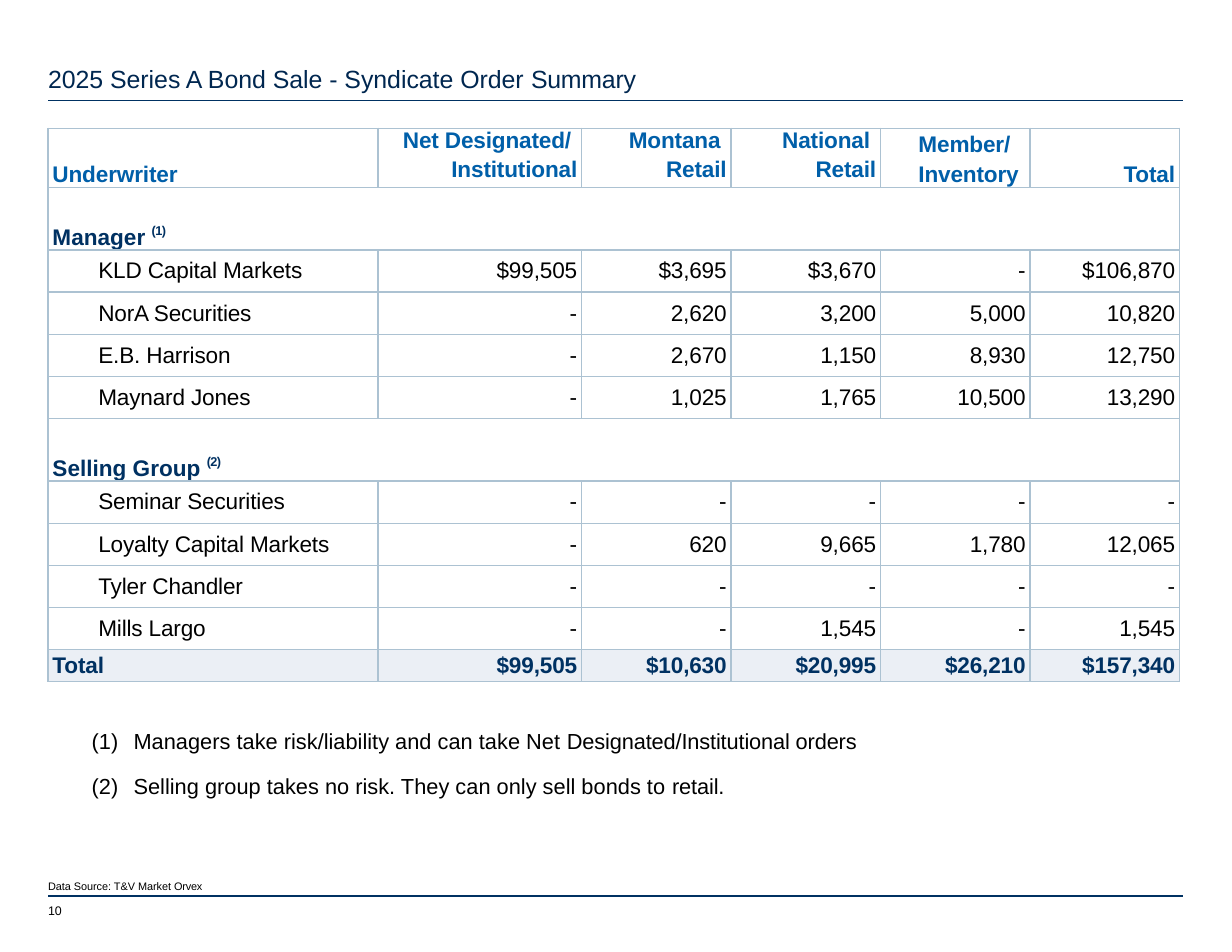
"""Builds the syndicate order summary slide with its table and notes."""
from lxml import etree
from pptx import Presentation
from pptx import util as u
from pptx.dml.color import RGBColor
from pptx.enum import shapes, text
from pptx.oxml import ns

NAVY, BLUE, BLACK, GRID, PALE = "003162", "005FA9", "000000", "ACC2D2", "EBEFF5"


def colour(value):
    return RGBColor.from_string(value)


def write(para, words, size, ink, bold=False, spacing=0, baseline=0):
    span = para.add_run()
    span.text = words
    span.font.name = "Arial"
    span.font.size = u.Pt(size)
    span.font.bold = bold
    span.font.color.rgb = colour(ink)
    properties = span.font._element
    if spacing:
        properties.set("spc", str(spacing))
    if baseline:
        properties.set("baseline", str(baseline))


deck = Presentation()
deck.slide_width, deck.slide_height = u.Cm(27.94), u.Cm(21.59)
page = deck.slides.add_slide(deck.slide_layouts[6])

for y in (2.28, 20.32):
    rule = page.shapes.add_connector(
        shapes.MSO_CONNECTOR.STRAIGHT, u.Cm(1.09), u.Cm(y), u.Cm(26.83), u.Cm(y))
    rule.line.color.rgb = colour(NAVY)
    rule.line.width = u.Pt(0.75)
    etree.SubElement(rule._element.spPr, ns.qn("a:effectLst"))

notes = [
    ("Managers take risk/liability and can take Net ", "Designated/Institutional orders"),
    ("Selling group takes no risk. They can only sell bonds to ", "retail."),
]
boxes = [
    (1.09, 1.45, 13.5, 0.74, 16, "002750",
     [("2025 Series A Bond Sale - Syndicate Order ", "Summary")]),
    (1.09, 19.96, 5, 0.36, 7, BLACK, [("Data Source: T&V Market ", "Orvex")]),
    (1.09, 20.47, 0.6, 0.38, 8, BLACK, [("10", "")]),
    (2.03, 16.51, 18, 1.68, 14, BLACK, notes),
]
for left, top, width, height, size, ink, lines in boxes:
    box = page.shapes.add_textbox(u.Cm(left), u.Cm(top), u.Cm(width), u.Cm(height))
    frame = box.text_frame
    frame.word_wrap = True
    frame.margin_left = frame.margin_right = frame.margin_top = frame.margin_bottom = 0
    for index, (start, end) in enumerate(lines):
        para = frame.add_paragraph() if index else frame.paragraphs[0]
        if lines is notes:
            layout = para._p.get_or_add_pPr()
            layout.set("marL", str(u.Cm(1)))
            layout.set("indent", str(u.Cm(-0.95)))
            etree.SubElement(layout, ns.qn("a:buFont"), typeface="Arial")
            etree.SubElement(layout, ns.qn("a:buAutoNum"), type="arabicParenBoth")
        if index:
            para.space_before = u.Pt(12.2)
        write(para, start, size, ink)
        if end:
            write(para, end, size, ink, spacing=-10)

headings = [["Underwriter"], ["Net Designated/ ", "Institutional"], ["Montana ", "Retail"],
            ["National ", "Retail"], ["Member/ Inventory"], ["Total"]]
orders = [
    ["Manager ", "(1)"],
    ["KLD Capital Markets", "$99,505", "$3,695", "$3,670", "-", "$106,870"],
    ["NorA Securities", "-", "2,620", "3,200", "5,000", "10,820"],
    ["E.B. Harrison", "-", "2,670", "1,150", "8,930", "12,750"],
    ["Maynard Jones", "-", "1,025", "1,765", "10,500", "13,290"],
    ["Selling Group ", "(2)"],
    ["Seminar Securities", "-", "-", "-", "-", "-"],
    ["Loyalty Capital Markets", "-", "620", "9,665", "1,780", "12,065"],
    ["Tyler Chandler", "-", "-", "-", "-", "-"],
    ["Mills Largo", "-", "-", "1,545", "-", "1,545"],
    ["Total", "$99,505", "$10,630", "$20,995", "$26,210", "$157,340"],
]
widths = [7.48, 4.62] + [3.39] * 4
heights = [1.34] + ([1.42] + [0.955] * 4) * 2 + [0.72]
table = page.shapes.add_table(len(heights), len(widths), u.Cm(1.09), u.Cm(2.91),
                              u.Cm(sum(widths)), u.Cm(sum(heights))).table
table.first_row = table.horz_banding = False
for column, width in zip(table.columns, widths):
    column.width = u.Cm(width)
for row, height in zip(table.rows, heights):
    row.height = u.Cm(height)
    for cell in row.cells:
        cell.margin_left = cell.margin_right = u.Cm(0.1)
        cell.margin_top = cell.margin_bottom = 0
        cell.vertical_anchor = text.MSO_ANCHOR.MIDDLE
        for side in ("lnL", "lnR", "lnT", "lnB"):
            edge = etree.SubElement(cell._tc.get_or_add_tcPr(), ns.qn("a:" + side),
                                    w=str(u.Pt(1)))
            paint = etree.SubElement(edge, ns.qn("a:solidFill"))
            etree.SubElement(paint, ns.qn("a:srgbClr"), val=GRID)
        cell.fill.background()

for column, lines in enumerate(headings):
    cell = table.cell(0, column)
    frame = cell.text_frame
    inventory = column == 4
    cell.vertical_anchor = (text.MSO_ANCHOR.TOP if len(lines) > 1 or inventory
                            else text.MSO_ANCHOR.BOTTOM)
    if inventory:
        cell.margin_left = u.Cm(0.86)
    for index, line in enumerate(lines):
        para = frame.add_paragraph() if index else frame.paragraphs[0]
        if column and not inventory:
            para.alignment = text.PP_ALIGN.RIGHT
        if inventory:
            para.line_spacing = u.Pt(18.9)
        elif index or len(lines) == 1:
            para.line_spacing = u.Pt(17.2)
        if index:
            para.space_before = u.Pt(1.5)
        write(para, line, 14.5, BLUE, True, -10)

for number, values in enumerate(orders, 1):
    total = values[0] == "Total"
    if len(values) == 2:
        group = table.cell(number, 0)
        group.merge(table.cell(number, len(widths) - 1))
        group.vertical_anchor = text.MSO_ANCHOR.BOTTOM
        para = group.text_frame.paragraphs[0]
        para.line_spacing = u.Pt(17.2)
        write(para, values[0], 14.5, NAVY, True)
        write(para, values[1], 14.2, NAVY, True, -40, 44000)
        continue
    for column, value in enumerate(values):
        cell = table.cell(number, column)
        para = cell.text_frame.paragraphs[0]
        if column:
            para.alignment = text.PP_ALIGN.RIGHT
        elif not total:
            cell.margin_left = u.Cm(1.14)
        if total:
            cell.fill.solid()
            cell.fill.fore_color.rgb = colour(PALE)
        write(para, value, 14.5, NAVY if total else BLACK, total,
              -50 if value == "-" else -10)

deck.save("out.pptx")
